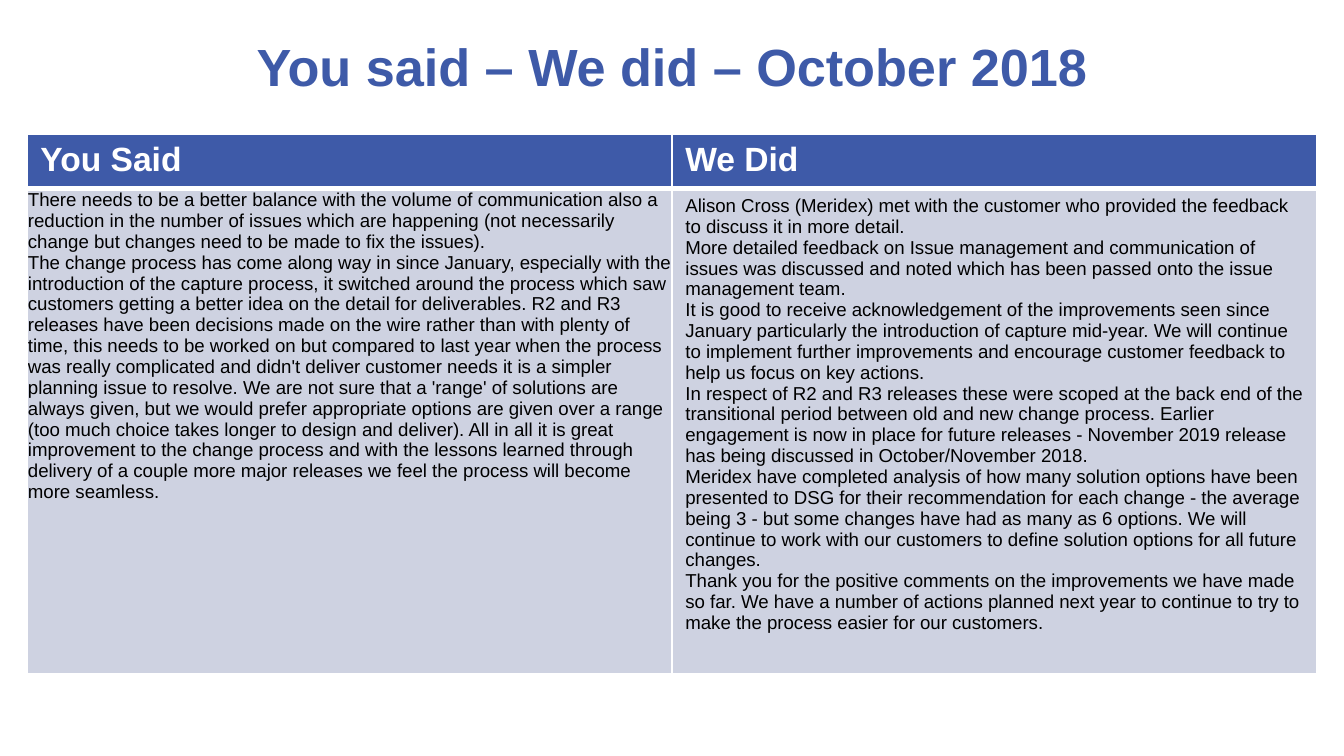
"""Builds the "You said – We did" customer feedback slide."""
from lxml.etree import fromstring
from pptx import Presentation
from pptx.dml.color import RGBColor
from pptx.enum.text import MSO_ANCHOR, PP_ALIGN
from pptx.oxml.ns import nsdecls
from pptx.util import Pt

TITLE = "You said – We did – October 2018"
COLUMNS = [
    ("You Said", [
        ["There needs to be a better balance with the volume of communication also a reduction in the number of issues which are happening (not necessarily change but changes need to be made to fix the issues)."],
        ["The change process has come along way in since January, especially with the introduction of the capture process, it switched around the process which saw customers getting a better idea on the detail for deliverables.",
         "R2 and R3 releases have been decisions made on the wire rather than with plenty of time, this needs to be worked on but compared to last year when the process was really complicated and didn't deliver customer needs it is a simpler planning issue to resolve.",
         "We are not sure that a 'range' of solutions are always given, but we would prefer appropriate options are given over a range (too much choice takes longer to design and deliver).",
         "All in all it is great improvement to the change process and with the lessons learned through delivery of a couple more major releases we feel the process will become more seamless."],
    ]),
    ("We Did", [
        ["Alison Cross (Meridex) met with the customer who provided the feedback to discuss it in more detail."],
        ["More detailed feedback on Issue management and communication of issues was discussed and noted which has been passed onto the issue management team."],
        ["It is good to receive acknowledgement of the improvements seen since January particularly the introduction of capture mid-year.",
         "We will continue to implement further improvements and encourage customer feedback to help us focus on key actions."],
        ["In respect of R2 and R3 releases these were scoped at the back end of the transitional period between old and new change process.",
         "Earlier engagement is now in place for future releases - November 2019 release has being discussed in October/November 2018."],
        ["Meridex have completed analysis of how many solution options have been presented to DSG for their recommendation for each change - the average being 3 - but some changes have had as many as 6 options.",
         "We will continue to work with our customers to define solution options for all future changes."],
        ["Thank you for the positive comments on the improvements we have made so far.",
         "We have a number of actions planned next year to continue to try to make the process easier for our customers."],
    ]),
]
COLORS = {"blue": "3E5AA8", "pale": "CED2E1", "white": "FFFFFF", "black": "000000"}
FORMATS = {
    "title": {"name": "Arial", "size": Pt(28), "bold": True, "color": "blue"},
    "head": {"name": "Arial", "size": Pt(18), "bold": True, "color": "white"},
    "body": {"name": "Arial", "size": Pt(10), "bold": False, "color": "black"},
}
TIGHT = {"margin_left": 1, "margin_top": 1, "margin_right": 1, "margin_bottom": 0}
COL_W, ROW_H = 645, (55, 450)


def px(n):
    return round(n * 914400 / 134.4)


def write(tf, texts, style, align=PP_ALIGN.LEFT):
    for i, text in enumerate(texts):
        p = tf.paragraphs[0] if i == 0 else tf.add_paragraph()
        p.alignment = align
        r = p.add_run()
        r.text = text
        for key, value in FORMATS[style].items():
            if key == "color":
                r.font.color.rgb = RGBColor.from_string(COLORS[value])
            else:
                setattr(r.font, key, value)


def dress(cell, fill, widths):
    cell.fill.solid()
    cell.fill.fore_color.rgb = RGBColor.from_string(COLORS[fill])
    tc_pr = cell._tc.get_or_add_tcPr()
    for i, (side, width) in enumerate(zip("LRTB", widths)):
        tc_pr.insert(i, fromstring(
            f'<a:ln{side} {nsdecls("a")} w="{Pt(width)}"><a:solidFill>'
            f'<a:srgbClr val="{COLORS["white"]}"/></a:solidFill></a:ln{side}>'))


prs = Presentation()
prs.slide_width, prs.slide_height = px(1344), px(756)
s = prs.slides.add_slide(prs.slide_layouts[6])

tf = s.shapes.add_textbox(px(67), px(19), px(1210), px(94)).text_frame
tf.word_wrap = True
tf.vertical_anchor = MSO_ANCHOR.MIDDLE
write(tf, [TITLE], "title", PP_ALIGN.CENTER)

table = s.shapes.add_table(2, len(COLUMNS), px(27), px(134),
                           px(COL_W * len(COLUMNS)), px(sum(ROW_H))).table
for row, height in zip(table.rows, ROW_H):
    row.height = px(height)
for c, (head, body) in enumerate(COLUMNS):
    table.columns[c].width = px(COL_W)
    top, bottom = table.cell(0, c), table.cell(1, c)
    write(top.text_frame, [head], "head")
    write(bottom.text_frame, [" ".join(sentences) for sentences in body], "body")
    dress(top, "blue", (1, 1, 1, 3))
    dress(bottom, "pale", (1, 1, 3, 1))
for side, margin in TIGHT.items():
    setattr(table.cell(1, 0), side, px(margin))

prs.save("out.pptx")
